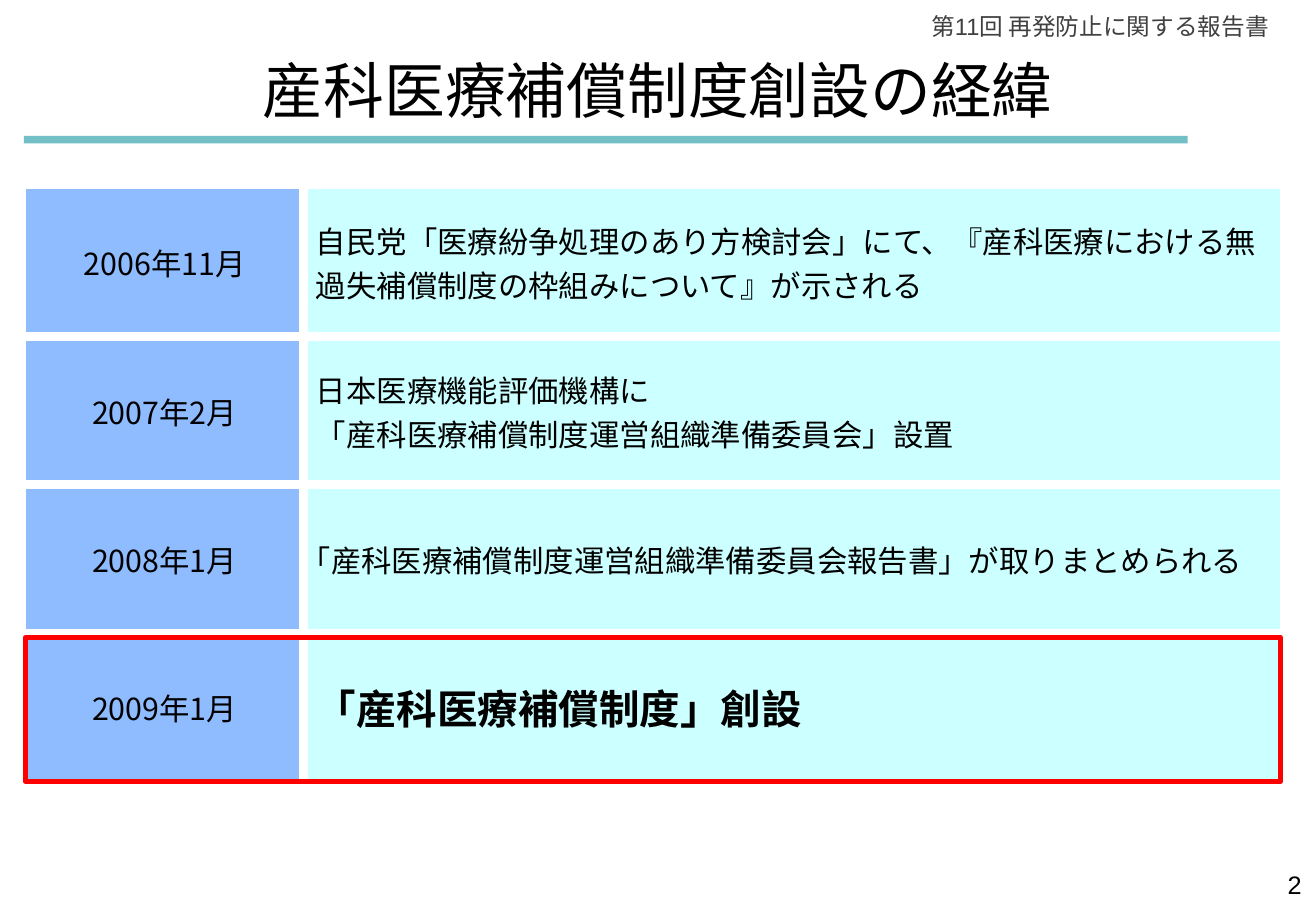
from lxml import etree
from pptx import Presentation
from pptx.dml.color import RGBColor
from pptx.enum.shapes import MSO_SHAPE
from pptx.enum.text import MSO_ANCHOR, MSO_AUTO_SIZE, PP_ALIGN
from pptx.oxml.ns import qn
from pptx.util import Cm, Pt

BLACK = RGBColor(0x00, 0x00, 0x00)
GRAY = RGBColor(0x40, 0x40, 0x40)
WHITE = RGBColor(0xFF, 0xFF, 0xFF)
RED = RGBColor(0xFF, 0x00, 0x00)
TEAL = RGBColor(0x72, 0xBF, 0xC5)
BLUE = RGBColor(0x8F, 0xBC, 0xFF)
CYAN = RGBColor(0xCC, 0xFF, 0xFF)

LEFT, CENTER, RIGHT = PP_ALIGN.LEFT, PP_ALIGN.CENTER, PP_ALIGN.RIGHT
MIDDLE = MSO_ANCHOR.MIDDLE
NO_FIT = MSO_AUTO_SIZE.NONE
RECT = MSO_SHAPE.RECTANGLE

ARIAL = "Arial"
NOTO = "Noto Sans CJK JP"
HEAD = {"name": ARIAL, "size": Pt(14)}
PAGE = {"name": ARIAL, "size": Pt(15)}
TITLE = {"name": NOTO, "size": Pt(36), "bold": False}
BODY = {"name": NOTO, "size": Pt(18), "bold": False}
STRONG = {"name": NOTO, "size": Pt(24), "bold": True}

TABLE_X, TABLE_Y = 0.53, 3.94
COLS = (5.82, 20.42)
ROW_H = 3.1
EVENTS = (
    ("2006年11月", "自民党「医療紛争処理のあり方検討会」にて、"
     "『産科医療における無過失補償制度の枠組みについて』が示される", BODY),
    ("2007年2月", "日本医療機能評価機構に\n"
     "「産科医療補償制度運営組織準備委員会」設置", BODY),
    ("2008年1月", "｢産科医療補償制度運営組織準備委員会報告書」が"
     "取りまとめられる", BODY),
    ("2009年1月", "「産科医療補償制度」創設", STRONG),
)


def write(frame, text, style, align, color=BLACK):
    frame.text = text
    for para in frame.paragraphs:
        para.alignment = align
        for run in para.runs:
            for key, value in style.items():
                setattr(run.font, key, value)
            run.font.color.rgb = color
            latin = run.font._element.find(qn("a:latin"))
            asian = etree.Element(qn("a:ea"), typeface=NOTO)
            latin.addnext(asian)


def add_label(slide, area, text, style, color):
    box = slide.shapes.add_textbox(*map(Cm, area))
    box.text_frame.word_wrap = True
    write(box.text_frame, text, style, RIGHT, color)


def add_rect(slide, area, fill=None, line=None):
    rect = slide.shapes.add_shape(RECT, *map(Cm, area))
    rect.shadow.inherit = False
    if fill is None:
        rect.fill.background()
    else:
        rect.fill.solid()
        rect.fill.fore_color.rgb = fill
    if line is None:
        rect.line.fill.background()
    else:
        rect.line.color.rgb = line
        rect.line.width = Pt(3)


def set_title(slide, text):
    title = slide.shapes.title
    title.left, title.top, title.width, title.height = map(
        Cm, (5.23, 0.97, 17.04, 1.78))
    frame = title.text_frame
    format_values = {
        "margin_left": 0, "margin_right": 0, "margin_top": 0,
        "margin_bottom": 0, "vertical_anchor": MIDDLE,
        "auto_size": NO_FIT, "word_wrap": True,
    }
    for key, value in format_values.items():
        setattr(frame, key, value)
    write(frame, text, TITLE, CENTER)


def set_border(cell, sides):
    """Draw white cell edges; sides maps L, R, T and B to points."""
    props = cell._tc.get_or_add_tcPr()
    for place, (side, width) in enumerate(sides.items()):
        line = etree.Element(qn("a:ln" + side), w=str(Pt(width)))
        fill = etree.SubElement(line, qn("a:solidFill"))
        etree.SubElement(fill, qn("a:srgbClr"), val=str(WHITE))
        props.insert(place, line)


def add_table(slide):
    count = len(EVENTS)
    area = (TABLE_X, TABLE_Y, sum(COLS), ROW_H * count)
    table = slide.shapes.add_table(count, len(COLS), *map(Cm, area)).table
    table.first_row = table.horz_banding = False
    for col, width in zip(table.columns, COLS):
        col.width = Cm(width)
    for row, (date, event, style) in enumerate(EVENTS):
        table.rows[row].height = Cm(ROW_H)
        parts = ((date, BODY, CENTER, BLUE), (event, style, LEFT, CYAN))
        for col, (text, font, align, color) in enumerate(parts):
            cell = table.cell(row, col)
            cell.vertical_anchor = MIDDLE
            cell.fill.solid()
            cell.fill.fore_color.rgb = color
            write(cell.text_frame, text, font, align)
            set_border(cell, {
                "L": 6 if col else 1,
                "R": 1 if col else 6,
                "T": 6 if row else 1,
                "B": 6 if row < count - 1 else 1,
            })


def main():
    prs = Presentation()
    prs.slide_width, prs.slide_height = Cm(27.51), Cm(19.05)
    slide = prs.slides.add_slide(prs.slide_layouts[5])
    add_rect(slide, (0.5, 2.84, 24.33, 0.16), fill=TEAL)
    add_label(slide, (18.75, 0.13, 8.03, 0.86),
              "第11回 再発防止に関する報告書", HEAD, GRAY)
    add_label(slide, (21.03, 18.06, 6.43, 1.32), "2", PAGE, BLACK)
    add_table(slide)
    add_rect(slide, (TABLE_X, 13.34, sum(COLS), 3), line=RED)
    set_title(slide, "産科医療補償制度創設の経緯")
    prs.save("out.pptx")


if __name__ == "__main__":
    main()
